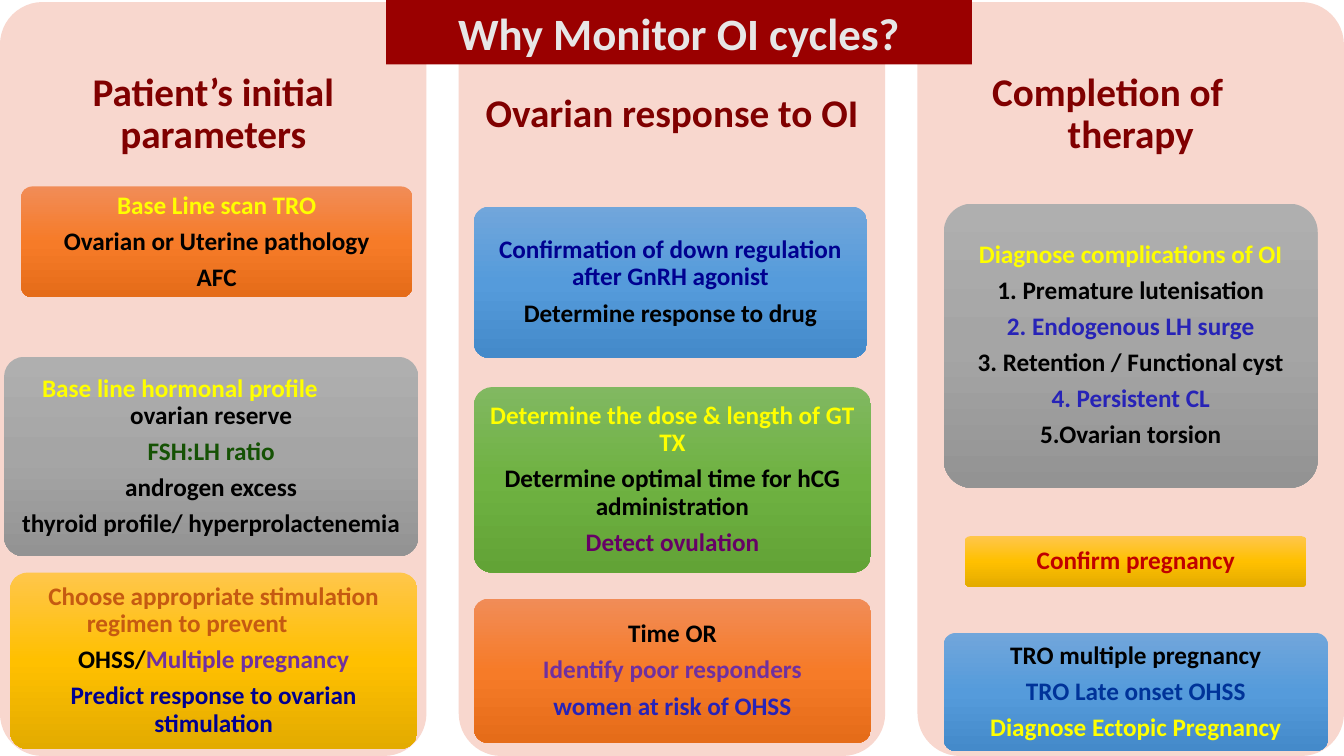
from copy import deepcopy
from dataclasses import dataclass

from pptx import Presentation
from pptx.dml.color import RGBColor
from pptx.enum.shapes import MSO_SHAPE
from pptx.enum.text import MSO_ANCHOR, PP_ALIGN
from pptx.util import Emu, Pt

ROUND = MSO_SHAPE.ROUNDED_RECTANGLE
RECT = MSO_SHAPE.RECTANGLE
MIDDLE = MSO_ANCHOR.MIDDLE
CENTER = PP_ALIGN.CENTER
LEFT = PP_ALIGN.LEFT
SCALE = 9144


@dataclass(frozen=True)
class Theme:
    font: str = "Calibri"
    title: int = 32
    head: int = 28
    body: int = 18
    gap: float = 0.35
    lead: float = 0.9
    panel: tuple = ("F8D7CE",)
    banner: tuple = ("9A0000",)
    orange: tuple = ("F18C57", "F67B28", "E56C19")
    gray: tuple = ("AFAFAF", "A5A5A5", "939393")
    gold: tuple = ("FFC64B", "FFC000", "E3AB00")
    blue: tuple = ("71A6DB", "559BDB", "448ACA")
    green: tuple = ("81B861", "6FB242", "62A336")
    pale: str = "E7E6E6"
    maroon: str = "800000"
    black: str = "000000"
    yellow: str = "FFFF00"
    forest: str = "155204"
    rust: str = "C55A11"
    violet: str = "7030A0"
    navy: str = "000090"
    plum: str = "660066"
    indigo: str = "2723B7"
    red: str = "C00000"
    royal: str = "003399"


T = Theme()


@dataclass(frozen=True)
class Line:
    text: str
    color: str = T.black
    left: int = 0
    tight: bool = False
    tail: str = ""
    accent: str = T.black


@dataclass(frozen=True)
class Box:
    x: int
    y: int
    w: int
    h: int


@dataclass(frozen=True)
class Card:
    box: Box
    fill: tuple
    lines: list


@dataclass(frozen=True)
class Column:
    head: list
    cards: list


COLUMNS = [
    Column([Line("Patient’s initial parameters", T.maroon)], [
        Card(Box(21, 185, 388, 110), T.orange, [
            Line("Base Line scan TRO", T.yellow),
            Line("Ovarian or Uterine pathology"),
            Line("AFC")]),
        Card(Box(4, 354, 411, 198), T.gray, [
            Line("Base line hormonal profile", T.yellow, left=27, tight=True),
            Line("ovarian reserve"),
            Line("FSH:LH ratio", T.forest),
            Line("androgen excess"),
            Line("thyroid profile/ hyperprolactenemia")]),
        Card(Box(10, 568, 404, 175), T.gold, [
            Line("Choose appropriate stimulation", T.rust, tight=True),
            Line("regimen to prevent", T.rust, left=66),
            Line("OHSS/", tail="Multiple pregnancy", accent=T.violet),
            Line("Predict response to ovarian stimulation", T.navy)]),
    ]),
    Column([Line("Ovarian response to OI", T.maroon)], [
        Card(Box(470, 205, 390, 150), T.blue, [
            Line("Confirmation of down regulation after GnRH agonist", T.navy),
            Line("Determine response to drug")]),
        Card(Box(470, 384, 394, 184), T.green, [
            Line("Determine the dose & length of GT TX", T.yellow),
            Line("Determine optimal time for hCG administration"),
            Line("Detect ovulation", T.plum)]),
        Card(Box(470, 594, 394, 143), T.orange, [
            Line("Time OR"),
            Line("Identify poor responders", T.violet),
            Line("women at risk of OHSS", T.indigo)]),
    ]),
    Column([Line("Completion of", T.maroon, left=62, tight=True),
            Line("therapy", T.maroon)], [
        Card(Box(936, 202, 371, 282), T.gray, [
            Line("Diagnose complications of OI", T.yellow),
            Line("1. Premature lutenisation"),
            Line("2. Endogenous LH surge", T.indigo),
            Line("3. Retention / Functional cyst"),
            Line("4. Persistent CL", T.indigo),
            Line("5.Ovarian torsion")]),
        Card(Box(957, 532, 339, 50), T.gold, [
            Line("Confirm pregnancy", T.red)]),
        Card(Box(936, 628, 381, 117), T.blue, [
            Line("TRO multiple pregnancy"),
            Line("TRO Late onset OHSS", T.royal),
            Line("Diagnose Ectopic Pregnancy", T.yellow)]),
    ]),
]


def px(value: int) -> Emu:
    return Emu(value * SCALE)


def place(box: Box) -> tuple:
    return px(box.x), px(box.y), px(box.w), px(box.h)


def paint(shape, colors: tuple) -> None:
    fill = shape.fill
    if len(colors) == 1:
        fill.solid()
        fill.fore_color.rgb = RGBColor.from_string(colors[0])
        return
    fill.gradient()
    fill.gradient_angle = 270
    stops = shape._element.spPr.gradFill.gsLst
    stops.append(deepcopy(stops[0]))
    for spot, (stop, color) in enumerate(zip(fill.gradient_stops, colors)):
        stop.position = spot / (len(colors) - 1)
        stop.color.rgb = RGBColor.from_string(color)


def draw(shapes, kind, box: Box, colors: tuple):
    shape = shapes.add_shape(kind, *place(box))
    shape.shadow.inherit = False
    shape.line.fill.background()
    paint(shape, colors)
    if kind == ROUND:
        shape.adjustments[0] = 0.1
    return shape


def write(shape, lines: list, size: int, side: int, edge: int,
          lead: float = T.lead) -> None:
    frame = shape.text_frame
    frame.word_wrap = True
    frame.vertical_anchor = MIDDLE
    frame.margin_left = frame.margin_right = px(side)
    frame.margin_top = frame.margin_bottom = px(edge)
    frame.text = "\n".join(line.text for line in lines)
    for para, line in zip(frame.paragraphs, lines):
        para.alignment = LEFT if line.left else CENTER
        if line.left:
            para._p.get_or_add_pPr().set("marL", str(px(line.left)))
        para.line_spacing = lead
        para.space_after = Pt(0 if line.tight else size * T.gap)
        if line.tail:
            para.add_run().text = line.tail
        for run, color in zip(para.runs, (line.color, line.accent)):
            run.font.name = T.font
            run.font.size = Pt(size)
            run.font.bold = True
            run.font.color.rgb = RGBColor.from_string(color)


def main() -> None:
    deck = Presentation()
    deck.slide_width, deck.slide_height = px(1333), px(750)
    shapes = deck.slides.add_slide(deck.slide_layouts[6]).shapes
    for index, column in enumerate(COLUMNS):
        x = index * 455
        draw(shapes, ROUND, Box(x, 2, 423, 748), T.panel)
        head = shapes.add_textbox(*place(Box(x, 2, 423, 224)))
        write(head, column.head, T.head, 12, 12)
        for card in column.cards:
            shape = draw(shapes, ROUND, card.box, card.fill)
            write(shape, card.lines, T.body, 5, 4)
    banner = draw(shapes, RECT, Box(383, 0, 581, 64), T.banner)
    title = Line("Why Monitor OI cycles?", T.pale, tight=True)
    write(banner, [title], T.title, 10, 5, 1.0)
    deck.save("out.pptx")


if __name__ == "__main__":
    main()
